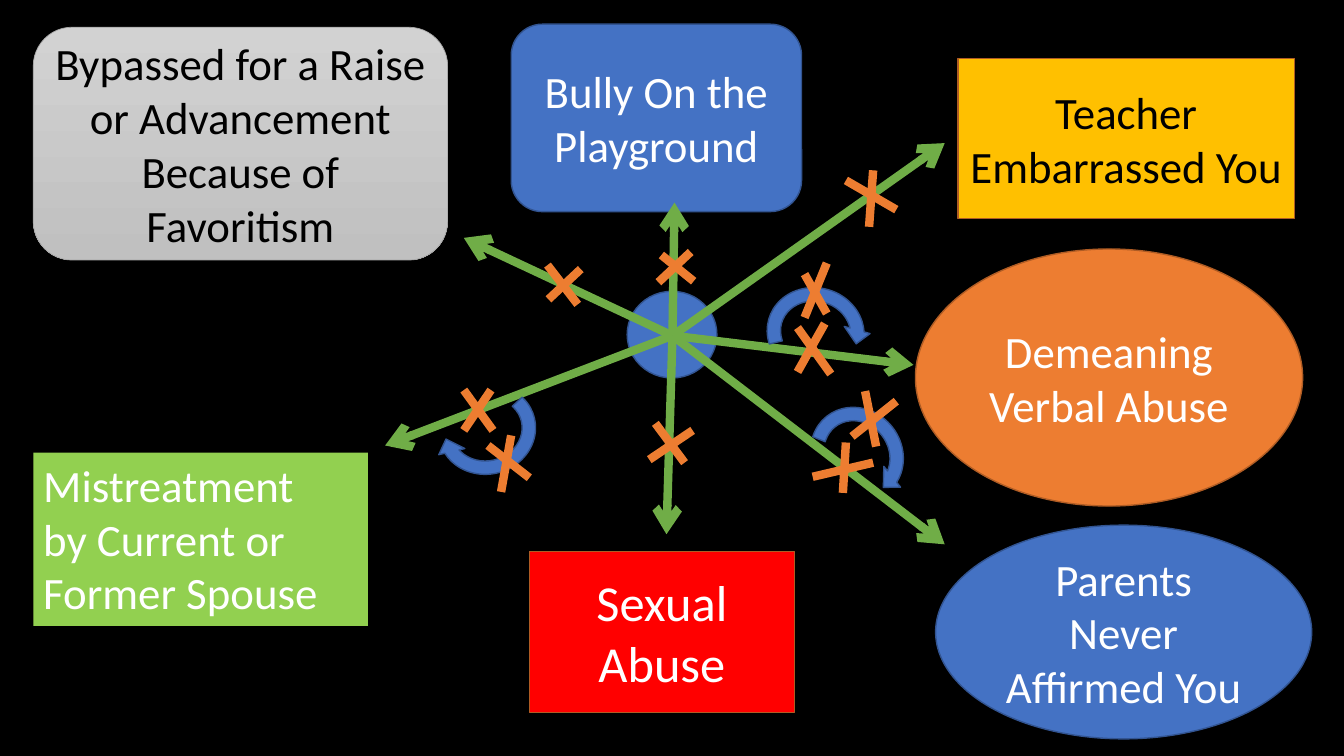
from dataclasses import dataclass
from typing import NamedTuple

from lxml.etree import SubElement
from pptx import Presentation
from pptx.dml.color import RGBColor
from pptx.enum.shapes import MSO_CONNECTOR, MSO_SHAPE as Shape
from pptx.enum.text import MSO_ANCHOR as Anchor, MSO_AUTO_SIZE as AutoSize, PP_ALIGN as Align
from pptx.oxml.ns import qn
from pptx.util import Inches, Pt

SLIDE_WIDTH, SLIDE_HEIGHT = Inches(13.33), Inches(7.5)
COLUMN = SLIDE_WIDTH / 13.33
ROW = SLIDE_HEIGHT / 7.5

BLACK = RGBColor(0x00, 0x00, 0x00)
WHITE = RGBColor(0xFF, 0xFF, 0xFF)
BLUE = RGBColor(0x44, 0x72, 0xC4)
DARK_BLUE = RGBColor(0x32, 0x54, 0x91)
RED = RGBColor(0xFF, 0x00, 0x00)
GOLD = RGBColor(0xFF, 0xC0, 0x00)
ORANGE = RGBColor(0xED, 0x7D, 0x31)
BROWN = RGBColor(0xAF, 0x5C, 0x24)
GREEN = RGBColor(0x70, 0xAD, 0x47)
LIME = RGBColor(0x92, 0xD0, 0x50)
GREY = RGBColor(0xA5, 0xA5, 0xA5)
SILVER = RGBColor(0xD2, 0xD2, 0xD2)
DARK_SILVER = RGBColor(0xC0, 0xC0, 0xC0)


class Point(NamedTuple):
    column: float
    row: float


class Box(NamedTuple):
    column: float
    row: float
    columns: float
    rows: float


class Stroke(NamedTuple):
    start: Point
    end: Point


class Cross(NamedTuple):
    first: Stroke
    second: Stroke


@dataclass(frozen=True)
class Wound:
    """A hurtful experience, shown as a filled shape with a caption."""
    kind: Shape
    box: Box
    fill: RGBColor
    outline: RGBColor | None
    paragraphs: tuple[str, ...] = ()
    color: RGBColor = WHITE
    size: int = 32
    outline_width: float = 1
    fill_end: RGBColor | None = None
    align: Align = Align.CENTER
    anchor: Anchor = Anchor.MIDDLE
    auto_size: AutoSize = AutoSize.NONE


class Bend(NamedTuple):
    box: Box
    rotation: float


HUB = Point(6.67, 3.33)
HUB_DISC = Wound(Shape.OVAL, Box(6.22, 2.89, 0.89, 0.86), BLUE, DARK_BLUE)

WOUNDS = (
    Wound(Shape.RECTANGLE, Box(5.25, 5.47, 2.63, 1.6), RED, BROWN, ("Sexual Abuse",), size=36),
    Wound(Shape.RECTANGLE, Box(9.5, 0.58, 3.34, 1.59), GOLD, BROWN,
          ("Teacher Embarrassed You",), BLACK),
    Wound(Shape.OVAL, Box(9.28, 5.21, 3.73, 2.12), BLUE, DARK_BLUE,
          ("Parents Never Affirmed You",)),
    Wound(Shape.ROUNDED_RECTANGLE, Box(5.07, 0.24, 2.88, 1.86), BLUE, DARK_BLUE,
          ("Bully On the Playground",)),
    Wound(Shape.ROUNDED_RECTANGLE, Box(0.33, 0.27, 4.11, 2.31), SILVER, GREY,
          ("Bypassed for a Raise or Advancement", "Because of Favoritism"), BLACK,
          outline_width=0.5, fill_end=DARK_SILVER),
    Wound(Shape.RECTANGLE, Box(0.33, 4.49, 3.32, 1.72), LIME, None,
          ("Mistreatment", "by Current or Former Spouse"),
          align=Align.LEFT, anchor=Anchor.TOP, auto_size=AutoSize.SHAPE_TO_FIT_TEXT),
    Wound(Shape.FLOWCHART_CONNECTOR, Box(9.08, 2.47, 3.84, 2.55), ORANGE, BROWN,
          ("Demeaning Verbal Abuse",)),
)

SPOKE_ENDS = (
    Point(3.82, 4.42), Point(9.37, 1.42), Point(6.61, 5.3), Point(9.37, 5.4),
    Point(9.06, 3.62), Point(4.6, 2.36), Point(6.69, 2.01),
)

SPOKE_CROSSES = (
    Cross(Stroke(Point(4.89, 4.27), Point(4.6, 3.87)), Stroke(Point(4.6, 4.27), Point(4.87, 3.87))),
    Cross(Stroke(Point(8.36, 4.89), Point(8.39, 4.39)), Stroke(Point(8.06, 4.73), Point(8.66, 4.59))),
    Cross(Stroke(Point(5.44, 2.97), Point(5.76, 2.67)), Stroke(Point(5.73, 3.02), Point(5.43, 2.63))),
    Cross(Stroke(Point(8.24, 3.71), Point(7.91, 3.25)), Stroke(Point(7.91, 3.69), Point(8.18, 3.21))),
    Cross(Stroke(Point(6.79, 4.59), Point(6.5, 4.2)), Stroke(Point(6.87, 4.27), Point(6.44, 4.56))),
    Cross(Stroke(Point(8.89, 2.08), Point(8.39, 1.79)), Stroke(Point(8.62, 2.25), Point(8.66, 1.69))),
    Cross(Stroke(Point(6.53, 2.8), Point(6.85, 2.5)), Stroke(Point(6.88, 2.79), Point(6.56, 2.53))),
)

BENDS = (
    Bend(Box(7.95, 4, 1.1, 1.02), 51.3),
    Bend(Box(4.28, 3.75, 1.1, 1.02), 166.8),
    Bend(Box(7.54, 2.79, 1.1, 1.02), 15.5),
)
BEND_ADJUSTMENTS = (0.13, 11.42, 204.58, 90.39, 0.13)

BEND_CROSSES = (
    Cross(Stroke(Point(4.97, 4.88), Point(5.07, 4.32)), Stroke(Point(5.25, 4.74), Point(4.84, 4.42))),
    Cross(Stroke(Point(8.2, 3.11), Point(7.98, 2.72)), Stroke(Point(7.98, 3.15), Point(8.2, 2.61))),
    Cross(Stroke(Point(8.45, 4.33), Point(8.89, 3.98)), Stroke(Point(8.69, 4.43), Point(8.58, 3.88))),
)


def apply_format(target, values: dict) -> None:
    for name, value in values.items():
        setattr(target, name, value)


def grid_lengths(*cells: float) -> list[int]:
    """Turn alternating column and row counts into slide lengths."""
    return [round(cell * (ROW if index % 2 else COLUMN)) for index, cell in enumerate(cells)]


def add_wound(slide, wound: Wound):
    shape = slide.shapes.add_shape(wound.kind, *grid_lengths(*wound.box))
    shape.shadow.inherit = False
    if wound.fill_end is None:
        shape.fill.solid()
        shape.fill.fore_color.rgb = wound.fill
    else:
        shape.fill.gradient()
        shape.fill.gradient_angle = 270
        for stop, color in zip(shape.fill.gradient_stops, (wound.fill, wound.fill_end)):
            stop.color.rgb = color
    if wound.outline is None:
        shape.line.fill.background()
    else:
        shape.line.color.rgb = wound.outline
        shape.line.width = Pt(wound.outline_width)
    add_caption(shape.text_frame, wound)
    return shape


def add_caption(frame, wound: Wound) -> None:
    apply_format(frame, {"word_wrap": True, "vertical_anchor": wound.anchor,
                         "auto_size": wound.auto_size})
    for index, text in enumerate(wound.paragraphs):
        paragraph = frame.add_paragraph() if index else frame.paragraphs[0]
        paragraph.alignment = wound.align
        run = paragraph.add_run()
        run.text = text
        apply_format(run.font, {"name": "Calibri", "size": Pt(wound.size)})
        run.font.color.rgb = wound.color


def add_stroke(slide, stroke: Stroke, color: RGBColor, arrow: bool = False) -> None:
    connector = slide.shapes.add_connector(
        MSO_CONNECTOR.STRAIGHT, *grid_lengths(*stroke.start, *stroke.end))
    connector.line.color.rgb = color
    connector.line.width = Pt(6)
    if arrow:
        SubElement(connector.line._get_or_add_ln(), qn("a:tailEnd"), type="arrow")
    SubElement(connector._element.spPr, qn("a:effectLst"))


def add_crosses(slide, crosses: tuple[Cross, ...]) -> None:
    for cross in crosses:
        for stroke in cross:
            add_stroke(slide, stroke, ORANGE)


def add_bend(slide, bend: Bend) -> None:
    shape = add_wound(slide, Wound(Shape.CIRCULAR_ARROW, bend.box, BLUE, DARK_BLUE))
    shape.rotation = bend.rotation
    for index, value in enumerate(BEND_ADJUSTMENTS):
        shape.adjustments[index] = value


def main() -> None:
    presentation = Presentation()
    apply_format(presentation, {"slide_width": SLIDE_WIDTH, "slide_height": SLIDE_HEIGHT})
    slide = presentation.slides.add_slide(presentation.slide_layouts[6])
    slide.background.fill.solid()
    slide.background.fill.fore_color.rgb = BLACK
    for wound in (HUB_DISC, *WOUNDS):
        add_wound(slide, wound)
    for end in SPOKE_ENDS:
        add_stroke(slide, Stroke(HUB, end), GREEN, arrow=True)
    add_crosses(slide, SPOKE_CROSSES)
    for bend in BENDS:
        add_bend(slide, bend)
    add_crosses(slide, BEND_CROSSES)
    presentation.save("out.pptx")


if __name__ == "__main__":
    main()
